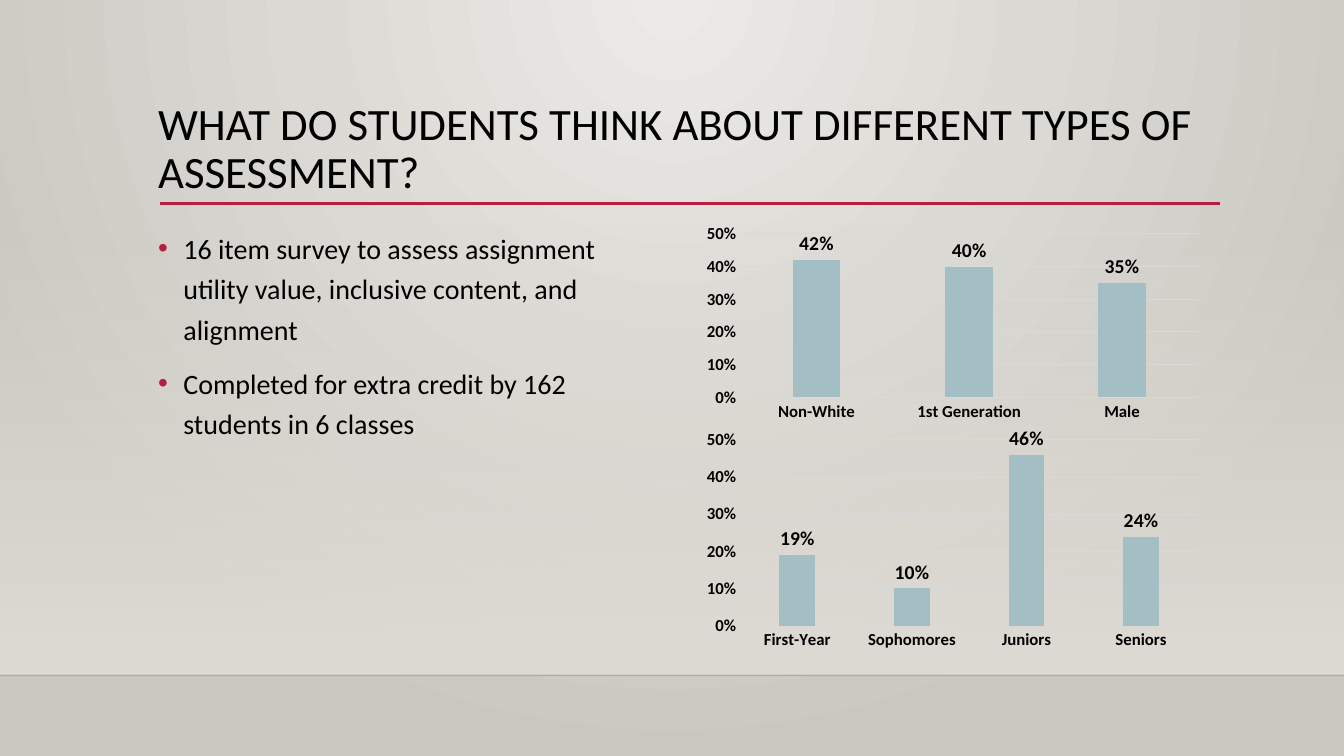
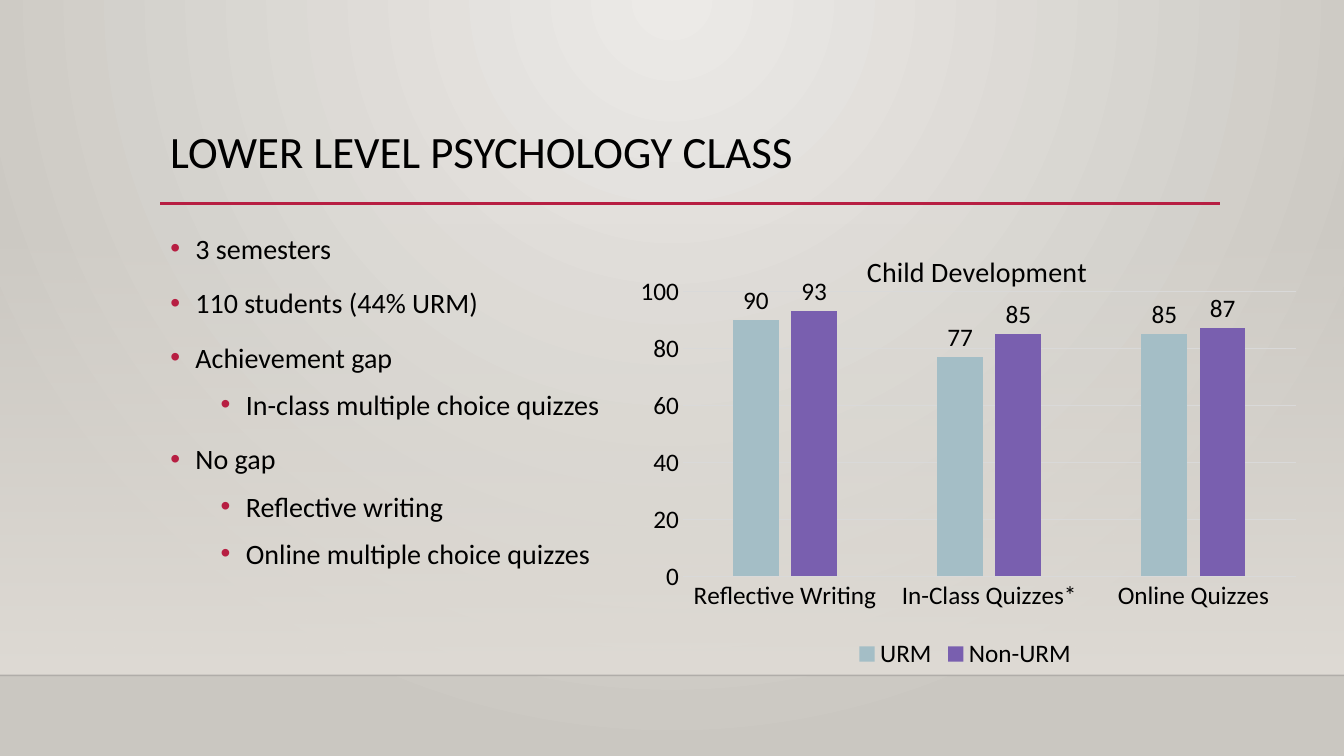
"""Build two slides on student assessment with text beside column charts."""
from dataclasses import dataclass

from lxml.etree import SubElement
from pptx import Presentation
from pptx.chart.data import CategoryChartData
from pptx.dml.color import RGBColor
from pptx.enum.chart import (XL_CHART_TYPE as ChartType, XL_LABEL_POSITION as LabelPosition,
                             XL_LEGEND_POSITION as LegendPosition, XL_TICK_MARK as TickMark)
from pptx.enum.shapes import MSO_CONNECTOR as Connector, MSO_SHAPE as Preset
from pptx.enum.text import MSO_ANCHOR as Anchor
from pptx.oxml.ns import qn
from pptx.util import Inches, Pt

WIDTH, HEIGHT = Inches(13.333), Inches(7.5)


@dataclass(frozen=True)
class Theme:
    font: str = "Calibri"
    ink: str = "000000"
    accent: str = "B71E42"
    glow: str = "ECEAE7"
    edge: str = "CAC7C1"
    wall: str = "DFDBD5"
    skirting: str = "000001"
    grid: str = "D9D9D9"
    series: tuple = ("A4BEC6", "795FAF")
    title_size: int = 32
    body_size: int = 20
    large_label: int = 18
    value_label: int = 14
    axis_label: int = 12


THEME = Theme()
FLOOR, RULE, BODY_TOP = 89.33, 26.93, 29.07
RULE_LEFT, RULE_RIGHT = 11.93, 90.75


def rgb(code):
    return RGBColor.from_string(code)


def across(percent):
    return round(WIDTH * percent / 100)


def down(percent):
    return round(HEIGHT * percent / 100)


def area(left, top, width, height):
    return across(left), down(top), across(width), down(height)


def set_font(font, size, bold=False):
    font.name, font.size, font.bold = THEME.font, Pt(size), bold
    font.color.rgb = rgb(THEME.ink)


def set_alpha(holder, percent):
    color = next(holder.iter(qn("a:srgbClr")))
    SubElement(color, qn("a:alpha")).set("val", str(percent * 1000))


def blend(fill, start, end):
    fill.gradient()
    for stop, color, position in zip(fill.gradient_stops, (start, end), (0, 1)):
        stop.color.rgb, stop.position = rgb(color), position


def add_background(slide):
    blend(slide.background.fill, THEME.glow, THEME.edge)
    gradient = next(slide.element.iter(qn("a:gradFill")))
    gradient.remove(gradient.find(qn("a:lin")))
    circle = SubElement(gradient, qn("a:path"))
    circle.set("path", "circle")
    focus = SubElement(circle, qn("a:fillToRect"))
    for side, inset in {"l": 43, "t": 0, "r": 43, "b": 100}.items():
        focus.set(side, str(inset * 1000))


def add_line(slide, left, right, row, color, weight):
    line = slide.shapes.add_connector(Connector.STRAIGHT, across(left), down(row),
                                      across(right), down(row))
    line.line.color.rgb, line.line.width = rgb(color), Pt(weight)
    SubElement(line.element.spPr, qn("a:effectLst"))
    return line


def add_wall(slide):
    top = 29.47
    wall = slide.shapes.add_shape(Preset.RECTANGLE, *area(0, top, 100, FLOOR - top))
    wall.shadow.inherit = False
    wall.line.fill.background()
    blend(wall.fill, THEME.wall, THEME.wall)
    wall.fill.gradient_angle = 270
    set_alpha(wall.element.spPr, 0)


def add_text(slide, place):
    frame = slide.shapes.add_textbox(*area(*place)).text_frame
    frame.word_wrap, frame.vertical_anchor = True, Anchor.TOP
    return frame


def add_title(slide, text, place):
    heading = add_text(slide, place).paragraphs[0]
    heading.text, heading.line_spacing = text, 0.9
    set_font(heading.font, THEME.title_size)


def add_bullet(paragraph, level):
    properties = paragraph._p.get_or_add_pPr()
    properties.set("marL", str(Inches(0.25 + 0.5 * level)))
    properties.set("indent", str(Inches(-0.25)))
    tint = SubElement(properties, qn("a:buClr"))
    SubElement(tint, qn("a:srgbClr")).set("val", THEME.accent)
    SubElement(properties, qn("a:buFont")).set("typeface", "Arial")
    SubElement(properties, qn("a:buChar")).set("char", "•")


def add_points(slide, points, place):
    frame = add_text(slide, place)
    for index, (level, text) in enumerate(points):
        point = frame.add_paragraph() if index else frame.paragraphs[0]
        point.text, point.level = text, level
        add_bullet(point, level)
        point.line_spacing = 1.2
        if index:
            point.space_before = Pt(5 if level else 10)
        set_font(point.font, THEME.body_size)


def add_columns(slide, categories, series, place, top_value, step, number_format,
                axis_size, label_size, bold=False):
    data = CategoryChartData(number_format=number_format)
    data.categories = categories
    for name, values in series.items():
        data.add_series(name, values)
    chart = slide.shapes.add_chart(ChartType.COLUMN_CLUSTERED, *area(*place), data).chart
    set_font(chart.font, axis_size)
    chart.has_title = chart.has_legend = False

    for axis in (chart.category_axis, chart.value_axis):
        axis.major_tick_mark = axis.minor_tick_mark = TickMark.NONE
        set_font(axis.tick_labels.font, axis_size, bold)
    baseline, scale = chart.category_axis, chart.value_axis
    scale.minimum_scale, scale.maximum_scale, scale.major_unit = 0, top_value, step
    scale.tick_labels.number_format = number_format
    scale.tick_labels.number_format_is_linked = False
    scale.format.line.fill.background()
    for line in (baseline.format.line, scale.major_gridlines.format.line):
        line.color.rgb, line.width = rgb(THEME.grid), Pt(0.75)

    plot = chart.plots[0]
    plot.vary_by_categories, plot.gap_width, plot.overlap = False, 219, -27
    plot.has_data_labels = True
    labels = plot.data_labels
    labels.show_value, labels.position = True, LabelPosition.OUTSIDE_END
    labels.number_format, labels.number_format_is_linked = number_format, False
    set_font(labels.font, label_size, bold)
    for group, color in zip(plot.series, THEME.series):
        group.format.fill.solid()
        group.format.fill.fore_color.rgb = rgb(color)
    return chart


def set_layout(part, index, settings):
    for automatic in part.findall(qn("c:layout")):
        part.remove(automatic)
    layout = SubElement(part, qn("c:layout"))
    part.insert(index, layout)
    manual = SubElement(layout, qn("c:manualLayout"))
    for name, value in settings.items():
        SubElement(manual, qn(f"c:{name}")).set("val", str(value))


def add_chart_heading(chart, text):
    heading = chart.chart_title.text_frame.paragraphs[0]
    heading.text = text
    set_font(heading.font, THEME.body_size)
    set_layout(next(chart.element.iter(qn("c:title"))), 1,
               {"xMode": "edge", "yMode": "edge", "x": 0.35, "y": 0.04})


def add_legend(chart):
    chart.has_legend = True
    chart.legend.position, chart.legend.include_in_layout = LegendPosition.BOTTOM, False
    set_font(chart.legend.font, THEME.large_label)


def new_slide(deck):
    slide = deck.slides.add_slide(deck.slide_layouts[6])
    add_background(slide)
    add_wall(slide)
    skirting = add_line(slide, 0, 100, FLOOR, THEME.skirting, 1)
    set_alpha(skirting.element.spPr, 20)
    add_line(slide, RULE_LEFT, RULE_RIGHT, RULE, THEME.accent, 2.5)
    return slide


def build_survey(deck):
    slide = new_slide(deck)
    left = 11.03
    add_title(slide, "WHAT DO STUDENTS THINK ABOUT DIFFERENT TYPES OF ASSESSMENT?",
              (left, 12.8, 78.9, 13.87))
    add_points(slide, [
        (0, "16 item survey to assess assignment utility value, inclusive content, and alignment"),
        (0, "Completed for extra credit by 162 students in 6 classes"),
    ], (left, BODY_TOP, 35.17, 66.53))
    breakdowns = [
        (27.2, {"Non-White": 0.42, "1st Generation": 0.40, "Male": 0.35}),
        (30.27, {"First-Year": 0.19, "Sophomores": 0.10, "Juniors": 0.46, "Seniors": 0.24}),
    ]
    top = BODY_TOP
    for height, shares in breakdowns:
        add_columns(slide, list(shares), {"Series 1": list(shares.values())},
                    (51.83, top, 38.1, height), 0.5, 0.1, "0%",
                    THEME.axis_label, THEME.value_label, bold=True)
        top += height


def build_psychology(deck):
    slide = new_slide(deck)
    add_title(slide, "LOWER LEVEL PSYCHOLOGY CLASS", (RULE_LEFT, 16.53, 66.9, 10))
    add_points(slide, [
        (0, "3 semesters"),
        (0, "110 students (44% URM)"),
        (0, "Achievement gap"),
        (1, "In-class multiple choice quizzes"),
        (0, "No gap"),
        (1, "Reflective writing"),
        (1, "Online multiple choice quizzes"),
    ], (RULE_LEFT, BODY_TOP, 36.83, 56.27))
    scores = add_columns(slide, ["Reflective Writing", "In-Class Quizzes*", "Online Quizzes"],
                         {"URM": (90, 77, 85), "Non-URM": (93, 85, 87)},
                         (46.2, 30.27, 51.23, 58.93), 100, 20, "General",
                         THEME.large_label, THEME.large_label)
    add_chart_heading(scores, "Child Development")
    add_legend(scores)
    set_layout(next(scores.element.iter(qn("c:plotArea"))), 0,
               {"layoutTarget": "inner", "xMode": "edge", "yMode": "edge",
                "x": 0.09, "y": 0.14, "w": 0.89, "h": 0.64})


def main():
    deck = Presentation()
    deck.slide_width, deck.slide_height = WIDTH, HEIGHT
    build_survey(deck)
    build_psychology(deck)
    deck.save("out.pptx")


if __name__ == "__main__":
    main()
